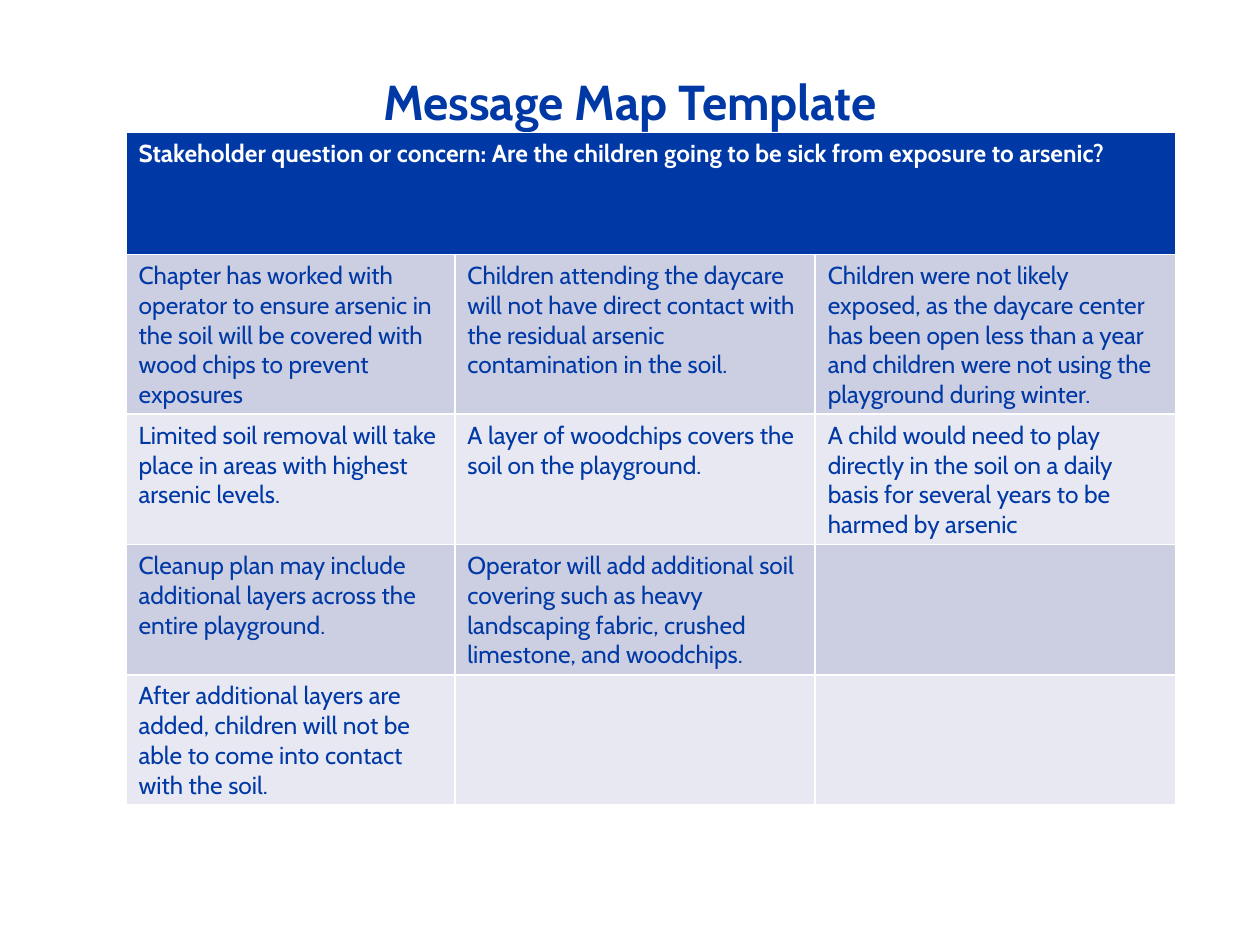
from pptx import Presentation
from pptx.dml.color import RGBColor
from pptx.enum.text import MSO_ANCHOR, PP_ALIGN
from pptx.util import Inches, Pt

BLUE, WHITE = "0039A6", "FFFFFF"
BANDS = ["CCCEE1", "E7E8F1"]
HEAD = "Stakeholder question or concern: Are the children going to be sick from exposure to arsenic?"
ROWS = [
    ["Chapter has worked with operator to ensure arsenic in the soil will be covered with wood chips to prevent exposures",
     "Children attending the daycare will not have direct contact with the residual arsenic contamination in the soil.",
     "Children were not likely exposed, as the daycare center has been open less than a year and children were not using the playground during winter."],
    ["Limited soil removal will take place in areas with highest arsenic levels.",
     "A layer of woodchips covers the soil on the playground.",
     "A child would need to play directly in the soil on a daily basis for several years to be harmed by arsenic"],
    ["Cleanup plan may include additional layers across the entire playground.",
     "Operator will add additional soil covering such as heavy landscaping fabric, crushed limestone, and woodchips.",
     ""],
    ["After additional layers are added, children will not be able to come into contact with the soil.",
     "", ""],
]


def color(code):
    return RGBColor.from_string(code)


class Deck:
    face = "Cabin"

    def __init__(self, wide, high):
        self.show = Presentation()
        self.show.slide_width = Inches(wide)
        self.show.slide_height = Inches(high)
        self.slide = self.show.slides.add_slide(self.show.slide_layouts[6])

    def label(self, frame, text, size, tint, bold):
        para = frame.paragraphs[0]
        para.text = text
        font = para.font
        font.name, font.size, font.bold = self.face, Pt(size), bold
        font.color.rgb = color(tint)
        return para

    def title(self, text, *box):
        frame = self.slide.shapes.add_textbox(*map(Inches, box)).text_frame
        frame.word_wrap = True
        frame.vertical_anchor = MSO_ANCHOR.BOTTOM
        para = self.label(frame, text, 28, BLUE, True)
        para.alignment = PP_ALIGN.CENTER
        para.line_spacing = Pt(30)

    def cell(self, cell, text, fill, tint=BLUE, bold=False):
        cell.fill.solid()
        cell.fill.fore_color.rgb = color(fill)
        self.label(cell.text_frame, text, 14, tint, bold)

    def table(self, head, rows, left, top, cols, high):
        count = len(rows) + 1
        table = self.slide.shapes.add_table(
            count, len(cols), Inches(left), Inches(top),
            Inches(sum(cols)), Inches(high * count)).table
        for col, wide in zip(table.columns, cols):
            col.width = Inches(wide)
        for row in table.rows:
            row.height = Inches(high)
        table.cell(0, 0).merge(table.cell(0, len(cols) - 1))
        self.cell(table.cell(0, 0), head, BLUE, WHITE, True)
        for r, row in enumerate(rows):
            for c, text in enumerate(row):
                self.cell(table.cell(r + 1, c), text, BANDS[r % 2])


def main():
    deck = Deck(10, 7.5)
    deck.title("Message Map Template", 0.5, 0.3, 9, 0.78)
    deck.table(HEAD, ROWS, 1, 1.05, [2.61, 2.86, 2.86], 0.97)
    deck.show.save("out.pptx")


if __name__ == "__main__":
    main()
